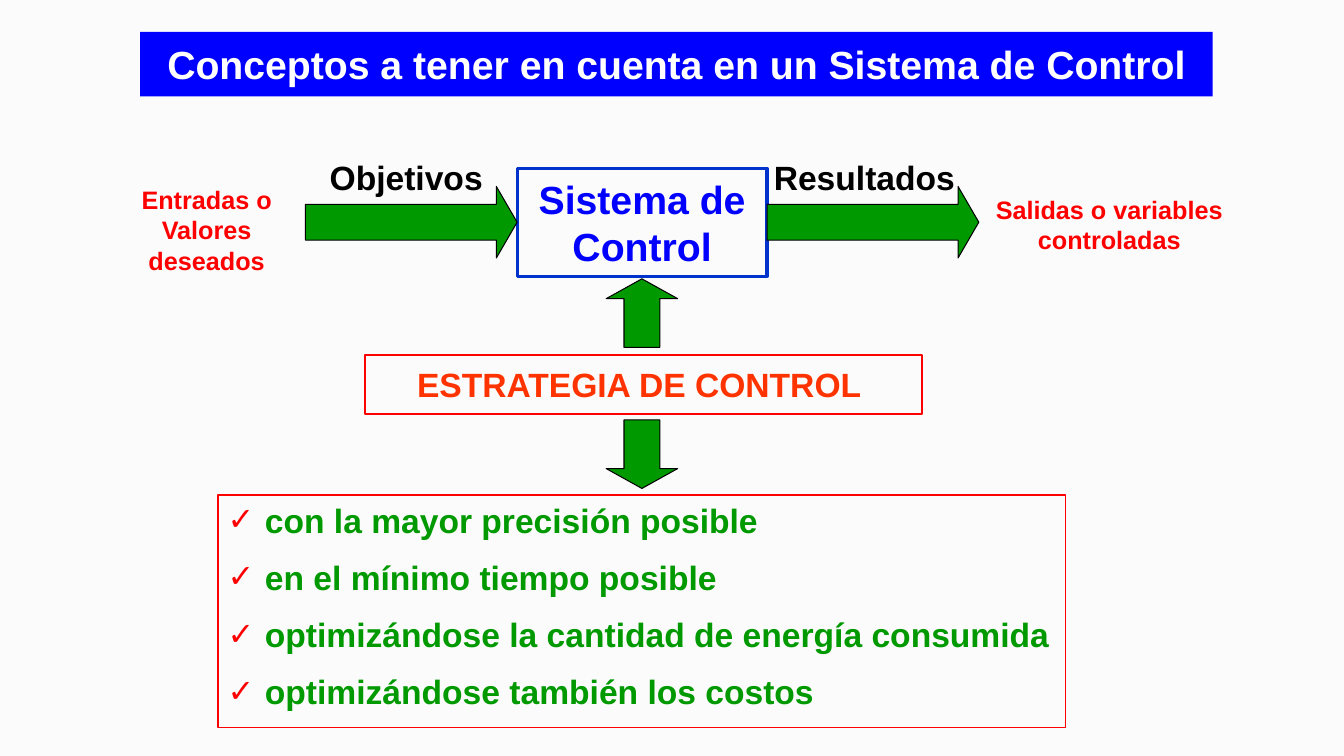
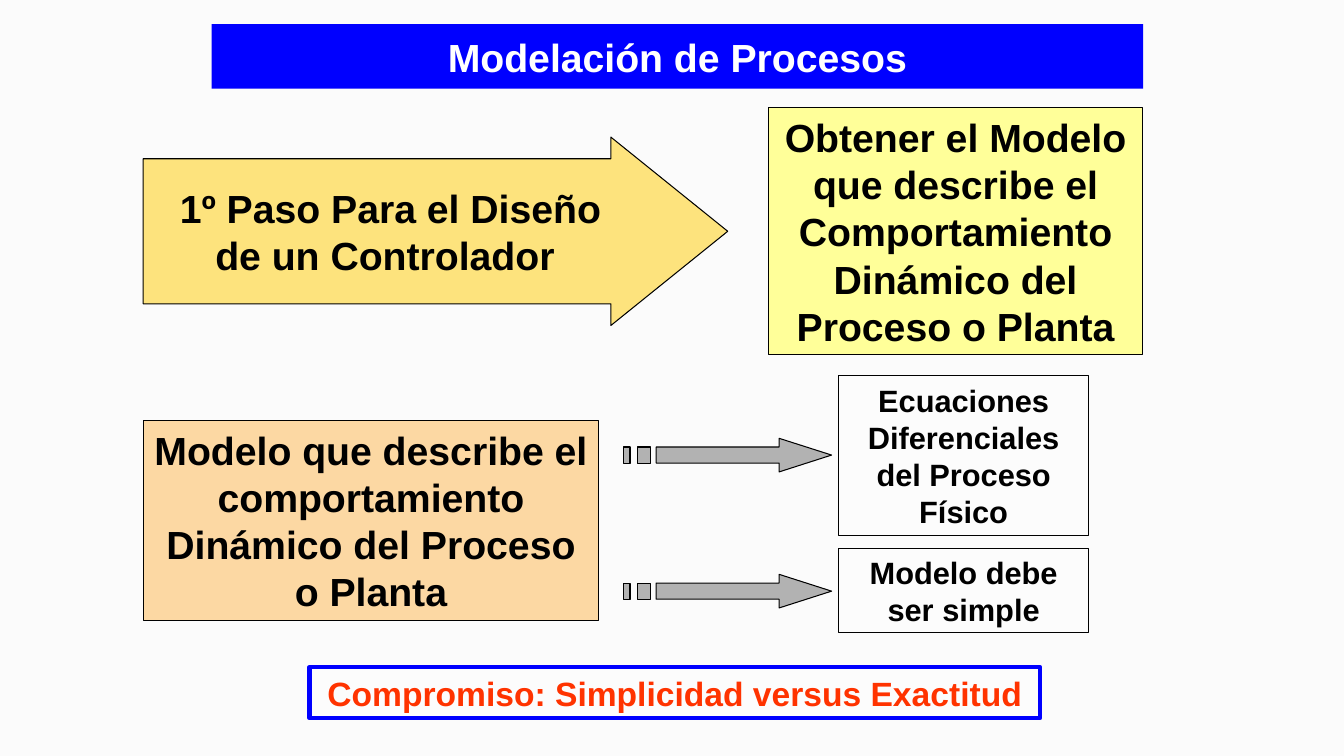
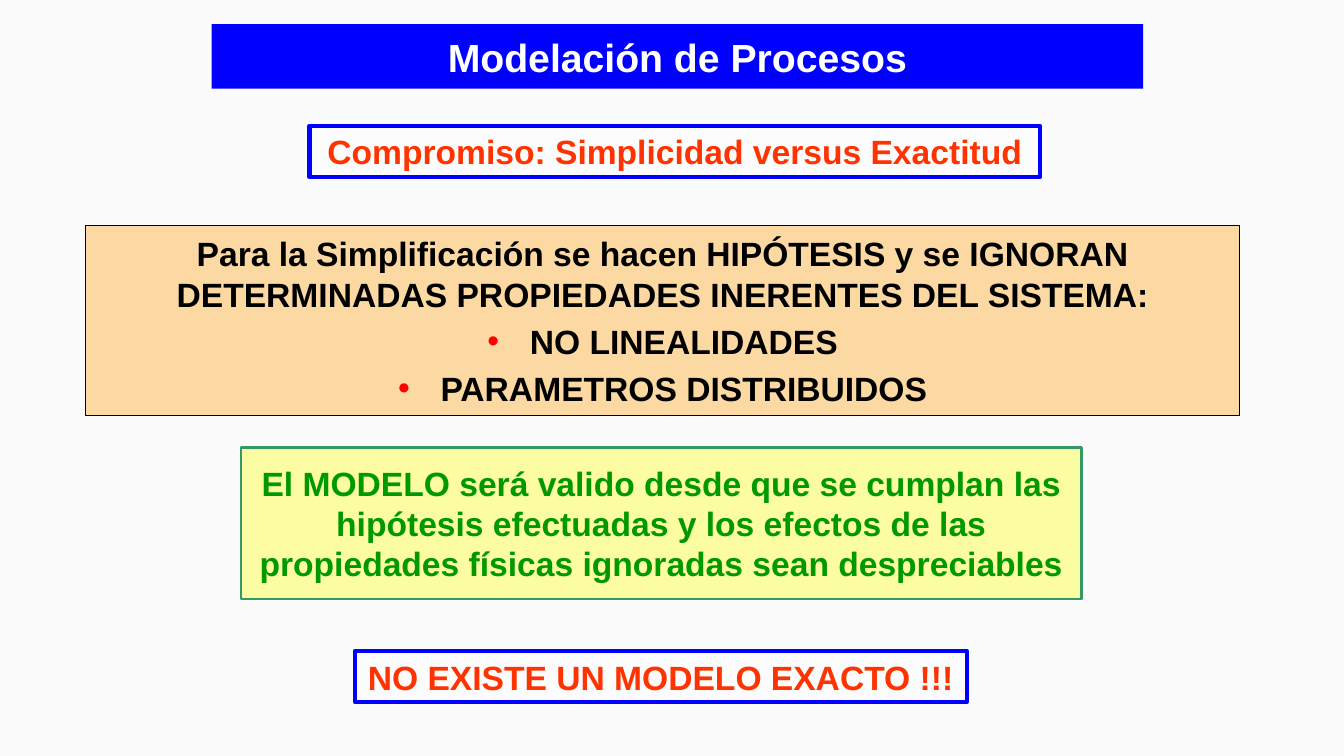
from pptx import Presentation
from pptx.dml.color import RGBColor
from pptx.enum.shapes import MSO_SHAPE
from pptx.enum.text import MSO_ANCHOR, PP_ALIGN
from pptx.oxml.ns import qn
from pptx.util import Inches, Pt
from lxml.etree import SubElement

W, H = Inches(13.33), Inches(7.5)
CELL = W / 40  # square grid: 40 columns by 22.5 rows
FONT = "Arial"
PAPER, WHITE, BLACK = "FBFBFB", "FFFFFF", "000000"
BLUE, NAVY, RED, ORANGE = "0000FF", "0033CC", "FF0000", "FF3300"
GREEN, TEAL, GRAY = "009900", "339966", "B2B2B2"
YELLOW, GOLD, AMBER, LEMON = "FFFF99", "FFCC00", "FF9900", "FFFF00"
PROCESS_TITLE = "Modelación de Procesos"
PROCESS_BAND = (6.3, 0.72, 27.72, 1.92)
TRADE_OFF = "Compromiso: Simplicidad versus Exactitud"


def rgb(color):
    return RGBColor.from_string(color)


def grid(*cells):
    return [round(n * CELL) for n in cells]


def add_slide(prs, title, band):
    s = prs.slides.add_slide(prs.slide_layouts[6])
    s.background.fill.solid()
    s.background.fill.fore_color.rgb = rgb(PAPER)
    add_box(s, band, title, fill=BLUE, size=28, color=WHITE)
    return s


def paint(sp, fill=None, alpha=None, line=None, width=0.75):
    """Set fill, opacity in percent and outline; None leaves them out."""
    sp.shadow.inherit = False
    if fill:
        sp.fill.solid()
        sp.fill.fore_color.rgb = rgb(fill)
        if alpha:
            clr = sp.element.spPr.find(qn("a:solidFill")).find(qn("a:srgbClr"))
            SubElement(clr, qn("a:alpha"), val=str(alpha * 1000))
    else:
        sp.fill.background()
    if line:
        sp.line.color.rgb = rgb(line)
        sp.line.width = Pt(width)
    else:
        sp.line.fill.background()


def add_bullet(p, char, indent, size=100):
    pPr = p._p.get_or_add_pPr()
    pPr.set("marL", str(Inches(indent)))
    pPr.set("indent", str(-Inches(indent)))
    SubElement(SubElement(pPr, qn("a:buClr")), qn("a:srgbClr"), val=RED)
    SubElement(pPr, qn("a:buSzPct"), val=str(size * 1000))
    SubElement(pPr, qn("a:buFont"), typeface=FONT)
    SubElement(pPr, qn("a:buChar"), char=char)


def write(sp, *lines, size=24, color=BLACK, align=PP_ALIGN.CENTER,
          anchor=MSO_ANCHOR.MIDDLE, gap=0, bullet=None, bullet_from=0):
    """Write one paragraph a line; bullet holds add_bullet's arguments."""
    tf = sp.text_frame
    tf.word_wrap = True
    tf.vertical_anchor = anchor
    for i, line in enumerate(lines):
        p = tf.add_paragraph() if i else tf.paragraphs[0]
        p.alignment = align
        if i:
            p.space_before = Pt(gap)
        if bullet and i >= bullet_from:
            add_bullet(p, *bullet)
        r = p.add_run()
        r.text = line
        r.font.name, r.font.size, r.font.bold = FONT, Pt(size), True
        r.font.color.rgb = rgb(color)


def add_box(s, at, *lines, shape=MSO_SHAPE.RECTANGLE, adj=(), fill=None,
            alpha=None, line=None, width=0.75, **text):
    sp = s.shapes.add_shape(shape, *grid(*at))
    for i, value in enumerate(adj):
        sp.adjustments[i] = value
    paint(sp, fill, alpha, line, width)
    if lines:
        write(sp, *lines, **text)


def add_label(s, at, text, **fmt):
    write(s.shapes.add_textbox(*grid(*at)), text, anchor=MSO_ANCHOR.TOP, **fmt)


def add_green_arrow(s, shape, at):
    add_box(s, at, shape=shape, adj=(0.5, 0.29), fill=GREEN, line=BLACK)


def add_striped_arrow(s, x, y):
    top, bottom, middle, height = 0.26, 0.74, 0.5, 1
    body, head, tip = 0.96, 4.62, 6.18
    outlines = [[(a, top), (b, top), (b, bottom), (a, bottom)]
                for a, b in ((0, 0.18), (0.39, 0.78))]
    outlines.append([(body, top), (head, top), (head, 0), (tip, middle),
                     (head, height), (head, bottom), (body, bottom)])
    contours = [[grid(x + dx, y + dy) for dx, dy in o] for o in outlines]
    fb = s.shapes.build_freeform(*contours[0][0])
    for i, points in enumerate(contours):
        if i:
            fb.move_to(*points[0])
        fb.add_line_segments(points[1:], close=True)
    paint(fb.convert_to_shape(), GRAY, line=BLACK)


def add_callout(s, x, y, w, text):
    add_box(s, (x, y, w, 1.52), text, fill=WHITE, alpha=35, line=BLUE,
            width=3, color=ORANGE)


def control_slide(prs):
    s = add_slide(prs, "Conceptos a tener en cuenta en un Sistema de Control",
                  (4.17, 0.95, 31.92, 1.92))
    add_box(s, (6.48, 14.73, 25.23, 6.93),
            "con la mayor precisión posible",
            "en el mínimo tiempo posible",
            "optimizándose la cantidad de energía consumida",
            "optimizándose también los costos",
            line=RED, width=1.25, color=GREEN, align=PP_ALIGN.LEFT,
            anchor=MSO_ANCHOR.TOP, gap=12, bullet=("✓", 0.37, 95))
    add_box(s, (10.86, 10.57, 16.59, 1.75), "ESTRATEGIA DE CONTROL ",
            line=RED, width=1.25, color=ORANGE)
    add_label(s, (9.21, 4.53, 5.76, 1.5), "Objetivos")
    add_label(s, (22.59, 4.53, 6.27, 1.5), "Resultados")
    add_label(s, (3.48, 5.34, 5.34, 3.03), "Entradas o Valores deseados",
              size=18, color=RED)
    add_label(s, (29.1, 5.64, 7.83, 2.1), "Salidas o variables controladas",
              size=18, color=RED)
    add_box(s, (15.39, 5.01, 7.44, 3.21), "Sistema de Control", line=NAVY,
            width=2.25, size=28, color=BLUE)
    for x in (9.09, 22.83):
        add_green_arrow(s, MSO_SHAPE.RIGHT_ARROW, (x, 5.55, 6.3, 2.13))
    for shape, y in ((MSO_SHAPE.UP_ARROW, 8.3), (MSO_SHAPE.DOWN_ARROW, 12.5)):
        add_green_arrow(s, shape, (18.04, y, 2.13, 2.04))


def model_slide(prs):
    s = add_slide(prs, PROCESS_TITLE, PROCESS_BAND)
    add_box(s, (22.86, 3.21, 11.16, 7.35),
            "Obtener el Modelo que describe el Comportamiento Dinámico del "
            "Proceso o Planta", fill=YELLOW, line=BLACK, size=28)
    add_box(s, (4.26, 4.08, 17.4, 5.61),
            "1º Paso Para el Diseño de un Controlador ",
            shape=MSO_SHAPE.RIGHT_ARROW, adj=(0.77, 0.62), fill=GOLD,
            alpha=50, line=BLACK, size=28)
    add_box(s, (4.26, 12.51, 13.56, 5.97),
            "Modelo que describe el comportamiento Dinámico del Proceso "
            "o Planta", fill=AMBER, alpha=35, line=BLACK, size=28)
    for text, y, h, arrow_y in (
            ("Ecuaciones Diferenciales del Proceso Físico", 11.19, 4.74, 13.05),
            ("Modelo debe ser simple", 16.32, 2.52, 17.1)):
        add_striped_arrow(s, 18.57, arrow_y)
        add_box(s, (24.96, y, 7.44, h), text, fill=WHITE, alpha=35,
                line=BLACK, size=22)
    add_callout(s, 9.21, 19.86, 21.75, TRADE_OFF)


def simplification_slide(prs):
    s = add_slide(prs, PROCESS_TITLE, PROCESS_BAND)
    add_callout(s, 9.21, 3.75, 21.75, TRADE_OFF)
    add_box(s, (2.55, 6.72, 34.35, 5.64),
            "Para la Simplificación se hacen HIPÓTESIS y se IGNORAN "
            "DETERMINADAS PROPIEDADES INERENTES DEL SISTEMA:",
            "NO LINEALIDADES", "PARAMETROS DISTRIBUIDOS",
            fill=AMBER, alpha=35, line=BLACK, gap=4.8,
            bullet=("•", 0.42), bullet_from=1)
    add_box(s, (7.17, 13.32, 25.02, 4.5),
            "El MODELO será valido desde que se cumplan las hipótesis "
            "efectuadas y los efectos de las propiedades físicas ignoradas "
            "sean despreciables",
            fill=LEMON, alpha=35, line=TEAL, width=1.5, color=GREEN)
    add_callout(s, 10.56, 19.38, 18.21, "NO EXISTE UN MODELO EXACTO !!!")


def main():
    prs = Presentation()
    prs.slide_width, prs.slide_height = W, H
    control_slide(prs)
    model_slide(prs)
    simplification_slide(prs)
    prs.save("out.pptx")


if __name__ == "__main__":
    main()
